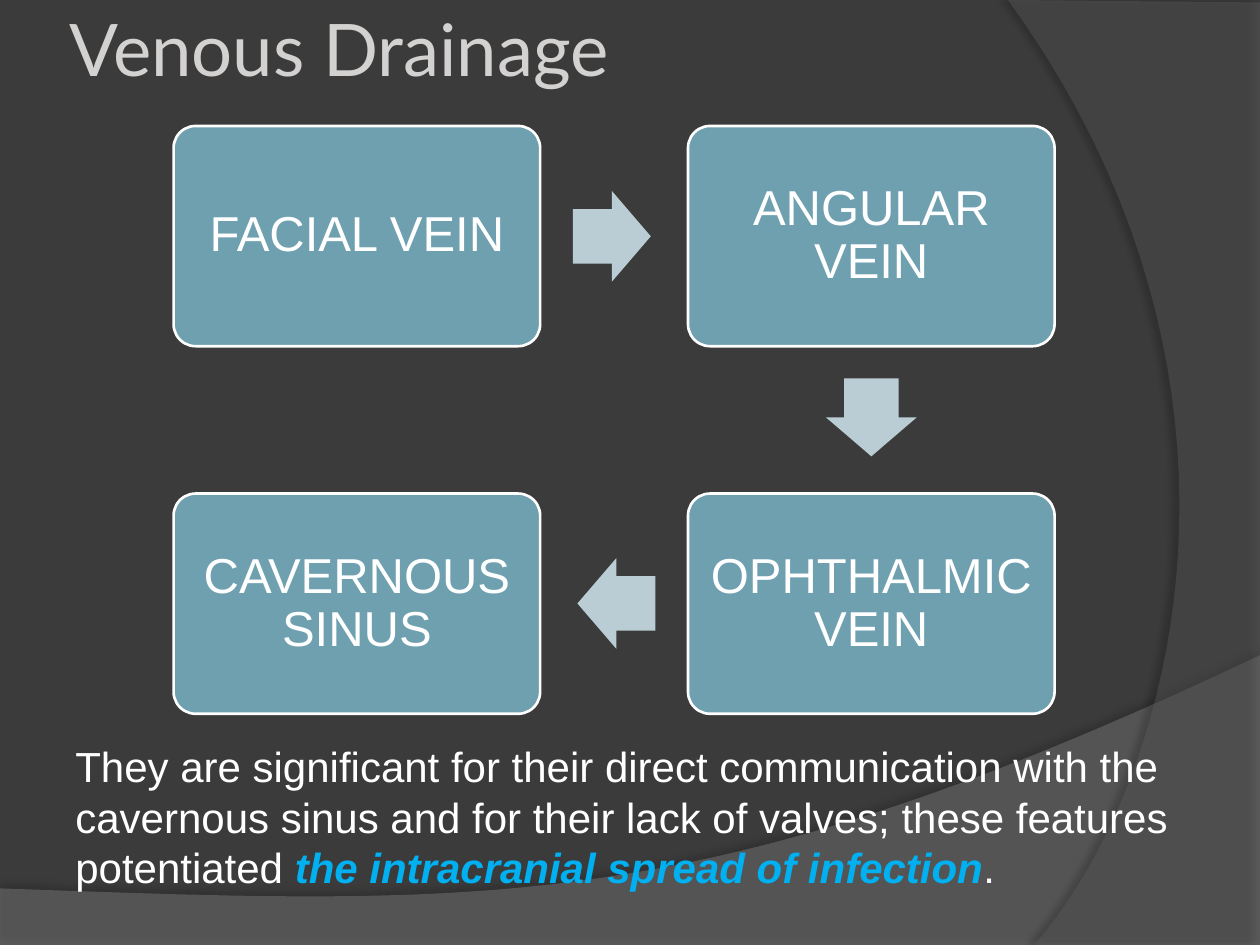
from dataclasses import dataclass
from lxml import etree
from pptx import Presentation
from pptx.dml.color import RGBColor
from pptx.enum.shapes import MSO_SHAPE
from pptx.enum.text import MSO_ANCHOR, MSO_AUTO_SIZE, PP_ALIGN
from pptx.oxml.ns import qn
from pptx.util import Cm, Pt


@dataclass(frozen=True)
class Theme:
    background: str = "3B3B3B"
    title: str = "D4D2D0"
    text: str = "FFFFFF"
    accent: str = "00B0F0"
    box: str = "6EA0B0"
    arrow: str = "BACDD4"
    title_font: str = "Lato"
    body_font: str = "Arial"
    title_size: float = 41.4
    box_size: float = 28
    body_size: float = 24


@dataclass(frozen=True)
class Wave:
    curve: tuple
    corners: tuple
    color: str
    opacity: int
    shadow_opacity: int
    shadow_distance: float
    shadow_angle: int


@dataclass(frozen=True)
class Vein:
    name: str
    col: int
    row: int


@dataclass(frozen=True)
class Arrow:
    left: float
    top: float
    rotation: int


THEME = Theme()
WIDTH, HEIGHT = 25.4, 19.05
BOX_LEFT, BOX_TOP, BOX_W, BOX_H = 3.5, 2.54, 7.39, 4.44
COL_STEP, ROW_STEP = 10.37, 7.41
ARROW_W, ARROW_H = 1.57, 1.83
CURVE_STEPS = 40

WAVES = (
    Wave(((WIDTH, 13.21), (14.2, 18.52), (9.93, 18.26), (0, 17.91)),
         ((0, HEIGHT), (WIDTH, HEIGHT)), "7F7F7F", 45, 35, 3.5, 270),
    Wave(((20.85, HEIGHT), (23.75, 15.72), (25.86, 7.62), (20.32, 0)),
         ((WIDTH, 0.05), (WIDTH, HEIGHT)), "5E5E5E", 40, 45, 4, 180),
)
VEINS = (
    Vein("FACIAL VEIN", 0, 0),
    Vein("ANGULAR VEIN", 1, 0),
    Vein("OPHTHALMIC VEIN", 1, 1),
    Vein("CAVERNOUS SINUS", 0, 1),
)
ARROWS = (Arrow(11.55, 3.85, 0), Arrow(16.78, 7.5, 90), Arrow(11.64, 11.25, 180))
NOTE = (
    ("They are significant for their direct communication with the cavernous "
     "sinus and for their lack of valves; these features potentiated ", False),
    ("the intracranial spread of infection", True),
    (".", False),
)


def rgb(color: str) -> RGBColor:
    return RGBColor.from_string(color)


def paint(sp, color: str) -> None:
    sp.shadow.inherit = False
    sp.fill.solid()
    sp.fill.fore_color.rgb = rgb(color)
    sp.line.fill.background()


def set_font(font, name: str, size: float, color: str) -> None:
    font.name = name
    font.size = Pt(size)
    font.color.rgb = rgb(color)


def set_insets(tf, inset: float) -> None:
    tf.margin_left = tf.margin_right = tf.margin_top = tf.margin_bottom = Cm(inset)


def add_alpha(color_element, percent: int) -> None:
    etree.SubElement(color_element, qn("a:alpha"), val=str(percent * 1000))


def bezier(points: tuple, t: float) -> tuple:
    weights = ((1 - t) ** 3, 3 * t * (1 - t) ** 2, 3 * t ** 2 * (1 - t), t ** 3)
    return tuple(sum(w * p[axis] for w, p in zip(weights, points)) for axis in (0, 1))


def add_wave(s, wave: Wave) -> None:
    outline = [bezier(wave.curve, i / CURVE_STEPS) for i in range(CURVE_STEPS + 1)]
    points = [(Cm(x), Cm(y)) for x, y in (*outline, *wave.corners)]
    builder = s.shapes.build_freeform(*points[0])
    builder.add_line_segments(points[1:], close=True)
    sp = builder.convert_to_shape()
    paint(sp, wave.color)
    properties = sp.element.spPr
    add_alpha(properties.find(qn("a:solidFill"))[0], wave.opacity)
    shadow = etree.SubElement(
        properties.find(qn("a:effectLst")), qn("a:outerShdw"),
        blurRad=str(Pt(4)), dist=str(Pt(wave.shadow_distance)),
        dir=str(wave.shadow_angle * 60000), algn="ctr", rotWithShape="0")
    add_alpha(etree.SubElement(shadow, qn("a:srgbClr"), val="000000"),
              wave.shadow_opacity)


def add_title(s, text: str) -> None:
    tf = s.shapes.add_textbox(Cm(1.27), 0, Cm(20.75), Cm(1.9)).text_frame
    tf.word_wrap = True
    tf.vertical_anchor = MSO_ANCHOR.MIDDLE
    set_insets(tf, 0.13)
    p = tf.paragraphs[0]
    p.text = text
    set_font(p.font, THEME.title_font, THEME.title_size, THEME.title)


def add_vein(s, vein: Vein) -> None:
    sp = s.shapes.add_shape(
        MSO_SHAPE.ROUNDED_RECTANGLE,
        Cm(BOX_LEFT + vein.col * COL_STEP), Cm(BOX_TOP + vein.row * ROW_STEP),
        Cm(BOX_W), Cm(BOX_H))
    sp.adjustments[0] = 0.1
    paint(sp, THEME.box)
    sp.line.color.rgb = rgb(THEME.text)
    sp.line.width = Pt(1.5)
    tf = sp.text_frame
    tf.word_wrap = True
    tf.vertical_anchor = MSO_ANCHOR.MIDDLE
    set_insets(tf, 0.17)
    p = tf.paragraphs[0]
    p.text = vein.name
    p.alignment = PP_ALIGN.CENTER
    p.line_spacing = 0.9
    set_font(p.font, THEME.body_font, THEME.box_size, THEME.text)


def add_arrow(s, arrow: Arrow) -> None:
    sp = s.shapes.add_shape(MSO_SHAPE.RIGHT_ARROW, Cm(arrow.left), Cm(arrow.top),
                            Cm(ARROW_W), Cm(ARROW_H))
    sp.adjustments[0] = 0.6
    sp.adjustments[1] = 0.5
    sp.rotation = arrow.rotation
    paint(sp, THEME.arrow)


def add_note(s, parts: tuple) -> None:
    tf = s.shapes.add_textbox(Cm(1.27), Cm(14.81), Cm(24.13), Cm(3.33)).text_frame
    tf.word_wrap = True
    tf.auto_size = MSO_AUTO_SIZE.SHAPE_TO_FIT_TEXT
    p = tf.paragraphs[0]
    set_font(p.font, THEME.body_font, THEME.body_size, THEME.text)
    for text, emphasis in parts:
        r = p.add_run()
        r.text = text
        if emphasis:
            r.font.bold = r.font.italic = True
        r.font.color.rgb = rgb(THEME.accent if emphasis else THEME.text)


def main() -> None:
    prs = Presentation()
    prs.slide_width, prs.slide_height = Cm(WIDTH), Cm(HEIGHT)
    s = prs.slides.add_slide(prs.slide_layouts[6])
    s.background.fill.solid()
    s.background.fill.fore_color.rgb = rgb(THEME.background)
    for wave in WAVES:
        add_wave(s, wave)
    add_title(s, "Venous Drainage")
    for vein in VEINS:
        add_vein(s, vein)
    for arrow in ARROWS:
        add_arrow(s, arrow)
    add_note(s, NOTE)
    prs.save("out.pptx")


if __name__ == "__main__":
    main()
